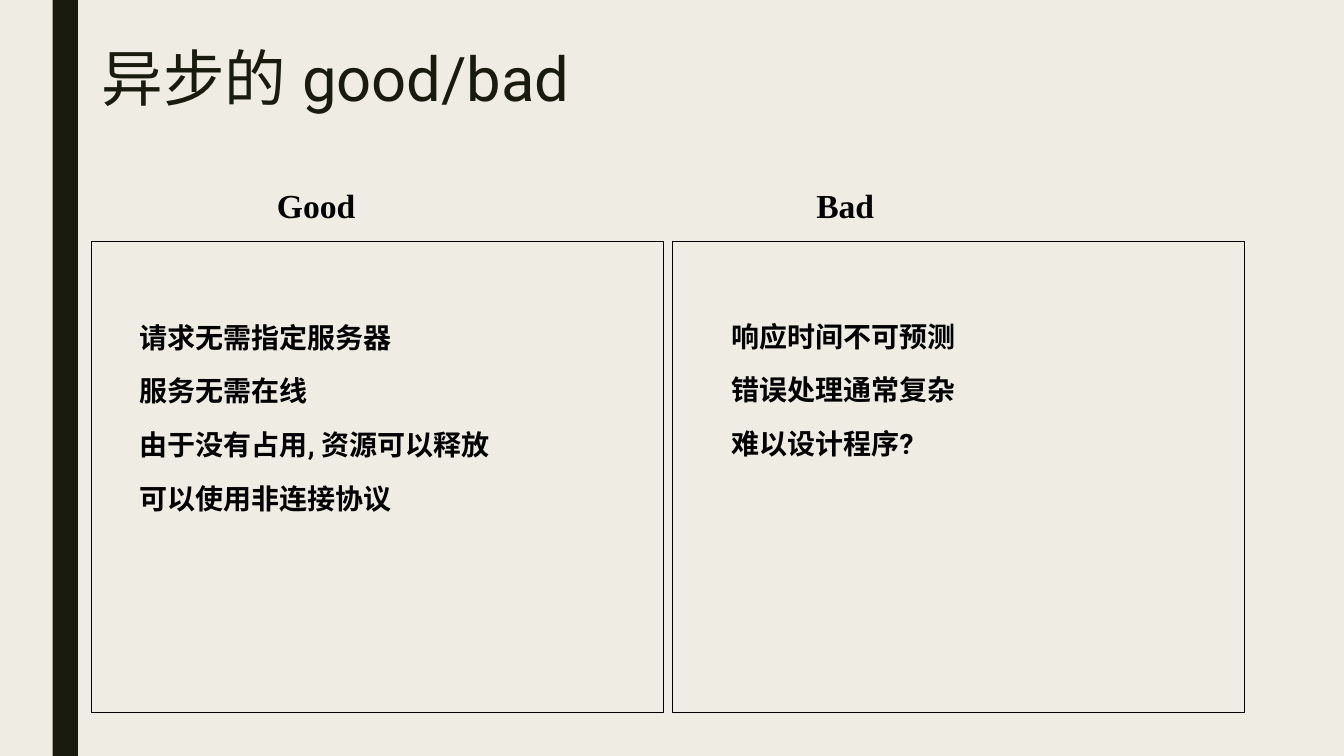
from dataclasses import dataclass

from lxml import etree
from pptx import Presentation
from pptx import util as u
from pptx.dml.color import RGBColor
from pptx.enum import shapes, text
from pptx.oxml.ns import qn
from pptx.util import Pt

BACKGROUND = RGBColor(0xEF, 0xED, 0xE3)
DARK = RGBColor(0x19, 0x1B, 0x0E)
BLACK = RGBColor(0, 0, 0)
BODY_FONT = "Roboto"
HEADING_FONT = "Times New Roman"


@dataclass(frozen=True)
class Column:
    heading: str
    heading_left: float
    frame_left: float
    text_left: float
    text_top: float
    points: tuple[str, ...]


COLUMNS = (
    Column("Good", 190.8, 65.5, 65.5, 216.7,
           ("请求无需指定服务器", "服务无需在线",
            "由于没有占用, 资源可以释放", "可以使用非连接协议")),
    Column("Bad", 576, 480.2, 488.2, 216,
           ("响应时间不可预测", "错误处理通常复杂", "难以设计程序?")),
)


def format_text(frame: text.MSO_ANCHOR, font_name: str, size: u.Length,
                color: RGBColor, bold: bool) -> None:
    """Format every run, for Latin and East Asian letters alike."""
    for paragraph in frame.paragraphs:
        for run in paragraph.runs:
            run.font.name = font_name
            run.font.size = size
            run.font.bold = bold
            run.font.color.rgb = color
            latin = run.font._element.find(qn("a:latin"))
            east_asian = etree.Element(qn("a:ea"), typeface=font_name)
            latin.addnext(east_asian)


def add_rectangle(slide, left: float, top: float, width: float, height: float):
    shape = slide.shapes.add_shape(shapes.MSO_SHAPE.RECTANGLE, Pt(left),
                                   Pt(top), Pt(width), Pt(height))
    shape.shadow.inherit = False
    return shape


def add_text(slide, left: float, top: float, width: float, height: float,
             content: str):
    box = slide.shapes.add_textbox(Pt(left), Pt(top), Pt(width), Pt(height))
    box.text_frame.word_wrap = True
    box.text_frame.text = content
    return box.text_frame


def add_title(slide, content: str) -> None:
    title = slide.shapes.title
    title.left, title.top = Pt(65.5), Pt(31)
    title.width, title.height = Pt(864), Pt(62.6)
    frame = title.text_frame
    frame.text = content
    frame.vertical_anchor = text.MSO_ANCHOR.TOP
    frame.paragraphs[0].alignment = text.PP_ALIGN.LEFT
    frame.paragraphs[0].line_spacing = 0.89
    format_text(frame, BODY_FONT, Pt(44), DARK, False)


def add_column(slide, column: Column) -> None:
    # Points
    points = add_text(slide, column.text_left, column.text_top, 400, 324,
                      "\n".join(column.points))
    for paragraph in points.paragraphs:
        paragraph.line_spacing = 1.35
        paragraph.space_before = paragraph.space_after = Pt(3)
        paragraph._p.get_or_add_pPr().set("marL", str(Pt(27)))
    format_text(points, BODY_FONT, Pt(20), BLACK, True)

    # Frame
    frame = add_rectangle(slide, column.frame_left, 172.8, 408.5, 336.2)
    frame.fill.background()
    frame.line.color.rgb = BLACK
    frame.line.width = Pt(0.75)

    # Heading
    heading = add_text(slide, column.heading_left, 128.2, 130, 36,
                       column.heading)
    format_text(heading, HEADING_FONT, Pt(24), BLACK, True)


def main() -> None:
    presentation = Presentation()
    presentation.slide_width, presentation.slide_height = Pt(960), Pt(540)
    slide = presentation.slides.add_slide(presentation.slide_layouts[5])
    slide.background.fill.solid()
    slide.background.fill.fore_color.rgb = BACKGROUND

    # Side bar
    bar = add_rectangle(slide, 37.6, 0, 18, 540)
    bar.fill.solid()
    bar.fill.fore_color.rgb = DARK
    bar.line.fill.background()

    # Title and the two columns
    add_title(slide, "异步的 good/bad")
    for column in COLUMNS:
        add_column(slide, column)

    presentation.save("out.pptx")


if __name__ == "__main__":
    main()
